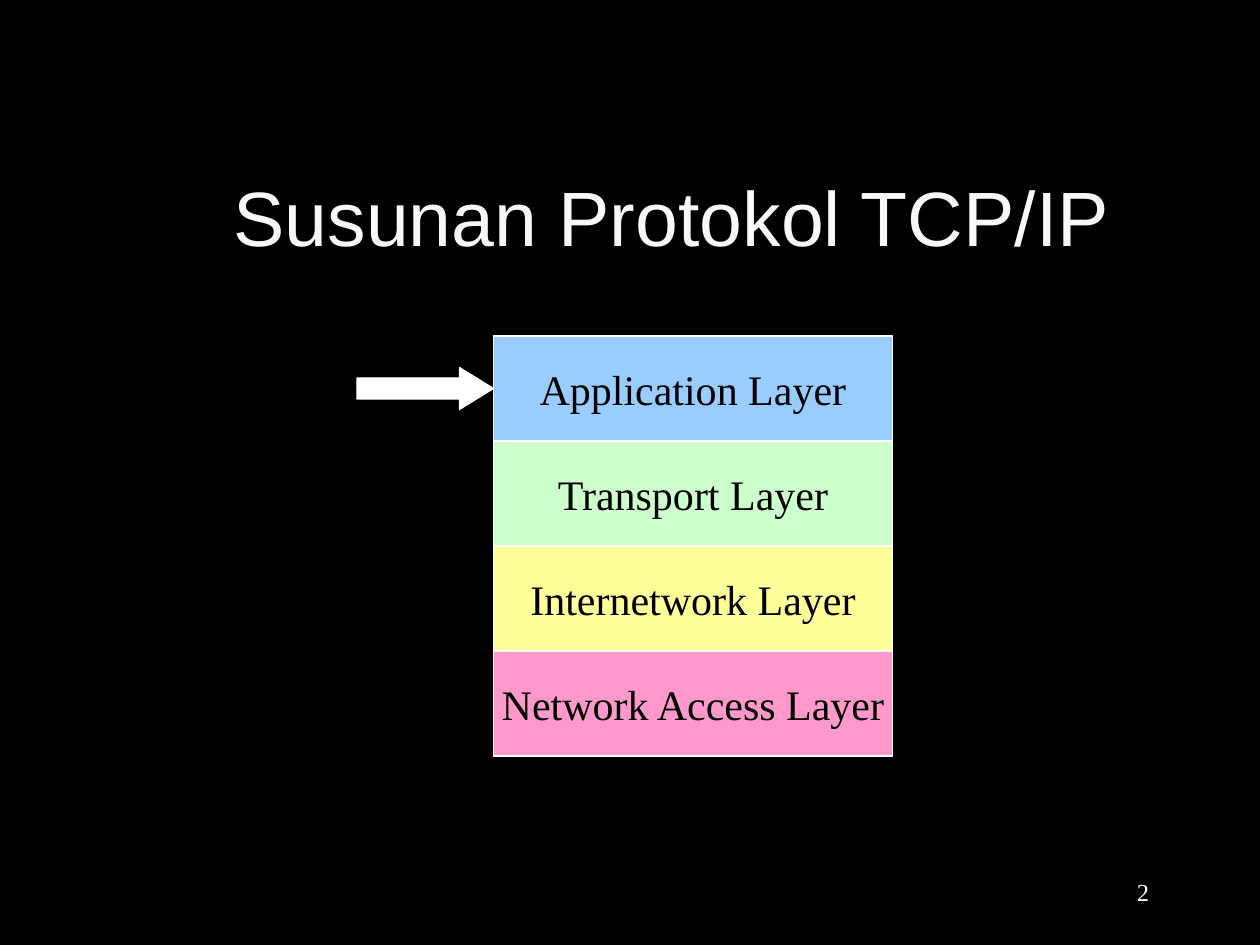
from pptx import Presentation
from pptx.dml.color import RGBColor
from pptx.enum.shapes import MSO_SHAPE
from pptx.enum.text import MSO_ANCHOR, PP_ALIGN
from pptx.util import Pt

RECT, ARROW = MSO_SHAPE.RECTANGLE, MSO_SHAPE.RIGHT_ARROW
MIDDLE = MSO_ANCHOR.MIDDLE
CENTER, RIGHT = PP_ALIGN.CENTER, PP_ALIGN.RIGHT

COLORS = {
    "black": "000000", "white": "FFFFFF", "title": "F8F8F8",
    "blue": "99CCFF", "green": "CCFFCC", "yellow": "FFFF99", "pink": "FF99CC",
}
SANS, SERIF = "Arial", "Times New Roman"
TITLE = "Susunan Protokol TCP/IP"
LAYERS = [
    ("Application Layer", "blue"),
    ("Transport Layer", "green"),
    ("Internetwork Layer", "yellow"),
    ("Network Access Layer", "pink"),
]
PAGE = "2"
STACK_LEFT, STACK_TOP, LAYER_W, LAYER_H = 282, 192, 228, 60
ARROW_W, ARROW_H = 78, 24


def rgb(name):
    return RGBColor.from_string(COLORS[name])


def write(sp, text, size, font, color, align=CENTER, wrap=True):
    tf = sp.text_frame
    tf.text = text
    tf.word_wrap = wrap
    tf.vertical_anchor = MIDDLE
    p = tf.paragraphs[0]
    p.alignment = align
    r = p.runs[0]
    r.font.size = Pt(size)
    r.font.name = font
    r.font.color.rgb = rgb(color)


def add_block(s, kind, left, top, width, height, fill):
    sp = s.shapes.add_shape(kind, Pt(left), Pt(top), Pt(width), Pt(height))
    sp.shadow.inherit = False
    sp.fill.solid()
    sp.fill.fore_color.rgb = rgb(fill)
    sp.line.color.rgb = rgb("white")
    sp.line.width = Pt(0.75)
    return sp


def main():
    """Build the TCP/IP protocol stack slide."""
    prs = Presentation()
    prs.slide_width, prs.slide_height = Pt(720), Pt(540)
    s = prs.slides.add_slide(prs.slide_layouts[5])
    s.background.fill.solid()
    s.background.fill.fore_color.rgb = rgb("black")

    title = s.shapes.title
    title.left, title.top, title.width, title.height = Pt(78), Pt(78), Pt(612), Pt(90)
    write(title, TITLE, 44, SANS, "title")

    for i, (name, fill) in enumerate(LAYERS):
        sp = add_block(s, RECT, STACK_LEFT, STACK_TOP + i * LAYER_H, LAYER_W, LAYER_H, fill)
        write(sp, name, 24, SERIF, "black", wrap=False)

    arrow_top = STACK_TOP + (LAYER_H - ARROW_H) / 2
    arrow = add_block(s, ARROW, STACK_LEFT - ARROW_W, arrow_top, ARROW_W, ARROW_H, "white")
    arrow.adjustments[1] = 0.81

    page = s.shapes.add_textbox(Pt(617), Pt(502), Pt(49), Pt(15))
    write(page, PAGE, 14, SERIF, "white", RIGHT)
    tf = page.text_frame
    tf.margin_left = tf.margin_right = Pt(9.4)
    tf.margin_top = tf.margin_bottom = Pt(5)

    prs.save("out.pptx")


if __name__ == "__main__":
    main()
